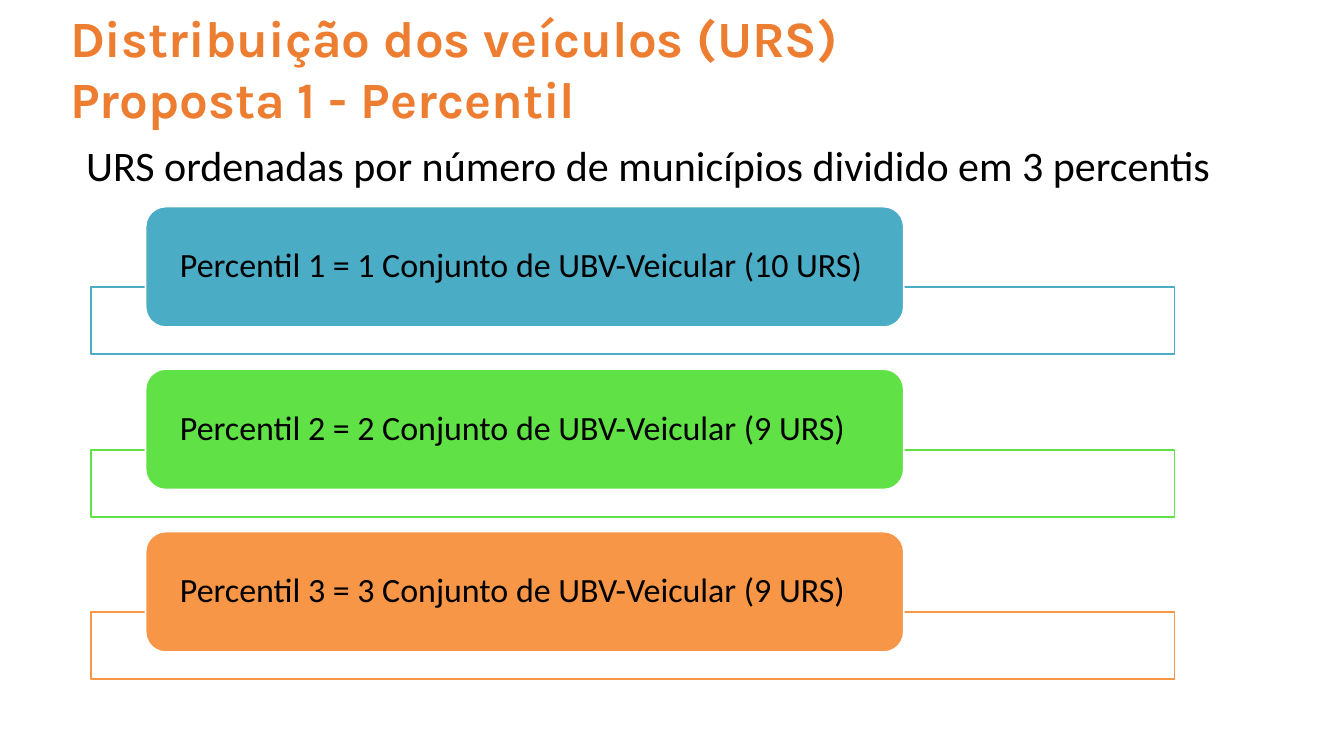
from lxml.etree import SubElement
from pptx import Presentation
from pptx.dml.color import RGBColor
from pptx.enum.shapes import MSO_SHAPE
from pptx.enum.text import MSO_ANCHOR, PP_ALIGN
from pptx.oxml.ns import qn
from pptx.util import Pt

PX = 6350
COLORS = {
    "title": "ED7D31",
    "text": "000000",
    "white": "FFFFFF",
    "blue": "4BACC6",
    "green": "60E146",
    "orange": "F79646",
}
PERCENTILES = [
    ("Percentil 1 = 1 Conjunto de UBV-Veicular (10 URS)", "blue"),
    ("Percentil 2 = 2 Conjunto de UBV-Veicular (9 URS)", "green"),
    ("Percentil 3 = 3 Conjunto de UBV-Veicular (9 URS)", "orange"),
]


def px(length):
    """Turn a px length into EMU."""
    return length * PX


def color(name):
    """Return the named colour."""
    return RGBColor.from_string(COLORS[name])


def write_text(shape, text, size, font="Calibri", fill="text", bold=False,
               anchor=MSO_ANCHOR.TOP, side=14, edge=7, line_spacing=1.0):
    """Write left-aligned lines of text into a shape."""
    frame = shape.text_frame
    frame.word_wrap = True
    frame.vertical_anchor = anchor
    frame.margin_left = frame.margin_right = px(side)
    frame.margin_top = frame.margin_bottom = px(edge)
    frame.text = text
    for paragraph in frame.paragraphs:
        paragraph.alignment = PP_ALIGN.LEFT
        paragraph.line_spacing = line_spacing
        paragraph.font.size = Pt(size)
        paragraph.font.name = font
        paragraph.font.bold = bold
        paragraph.font.color.rgb = color(fill)


def add_box(slide, preset, box, fill, line, opacity=100):
    """Add a filled and outlined shape."""
    shape = slide.shapes.add_shape(preset, *map(px, box))
    shape.shadow.inherit = False
    shape.fill.solid()
    shape.fill.fore_color.rgb = color(fill)
    shape.line.color.rgb = color(line)
    shape.line.width = Pt(2)
    if opacity < 100:
        fill_color = shape.fill._xPr.find(qn("a:solidFill"))[0]
        SubElement(fill_color, qn("a:alpha")).set("val", str(opacity * 1000))
    return shape


def add_heading(slide, left, top, width, height):
    """Place the title and the sentence below it."""
    title = slide.shapes.title
    title.left = px(left)
    title.top = px(top)
    title.width = px(width)
    title.height = px(height)
    write_text(title, "Distribuição dos veículos (URS)\nProposta 1 - Percentil",
               60, font="Karla", fill="title", bold=True)
    subtitle = slide.shapes.add_textbox(px(left + 38), px(top + 312), px(2840), px(134))
    write_text(subtitle, "URS ordenadas por número de municípios dividido em 3 percentis", 49.5)


def add_percentile(slide, left, top, width, text, accent):
    """Place one percentile: a wide frame with a label over its top edge."""
    add_box(slide, MSO_SHAPE.RECTANGLE, (left, top + 190, width, 158),
            "white", accent, opacity=90)
    label = add_box(slide, MSO_SHAPE.ROUNDED_RECTANGLE,
                    (left + 128, top, width * 7 // 10, 284), accent, "white")
    write_text(label, text, 40, anchor=MSO_ANCHOR.MIDDLE, side=67, edge=0,
               line_spacing=0.9)


def add_percentiles(slide, left, top, width, pitch):
    """Stack the percentiles at an equal pitch."""
    for index, (text, accent) in enumerate(PERCENTILES):
        add_percentile(slide, left, top + index * pitch, width, text, accent)


def main():
    """Build the slide and save it."""
    presentation = Presentation()
    presentation.slide_width = px(3166)
    presentation.slide_height = px(1782)
    slide = presentation.slides.add_slide(presentation.slide_layouts[5])
    add_heading(slide, 151, 9, 2114, 302)
    add_percentiles(slide, 215, 487, 2552, 383)
    presentation.save("out.pptx")


if __name__ == "__main__":
    main()
